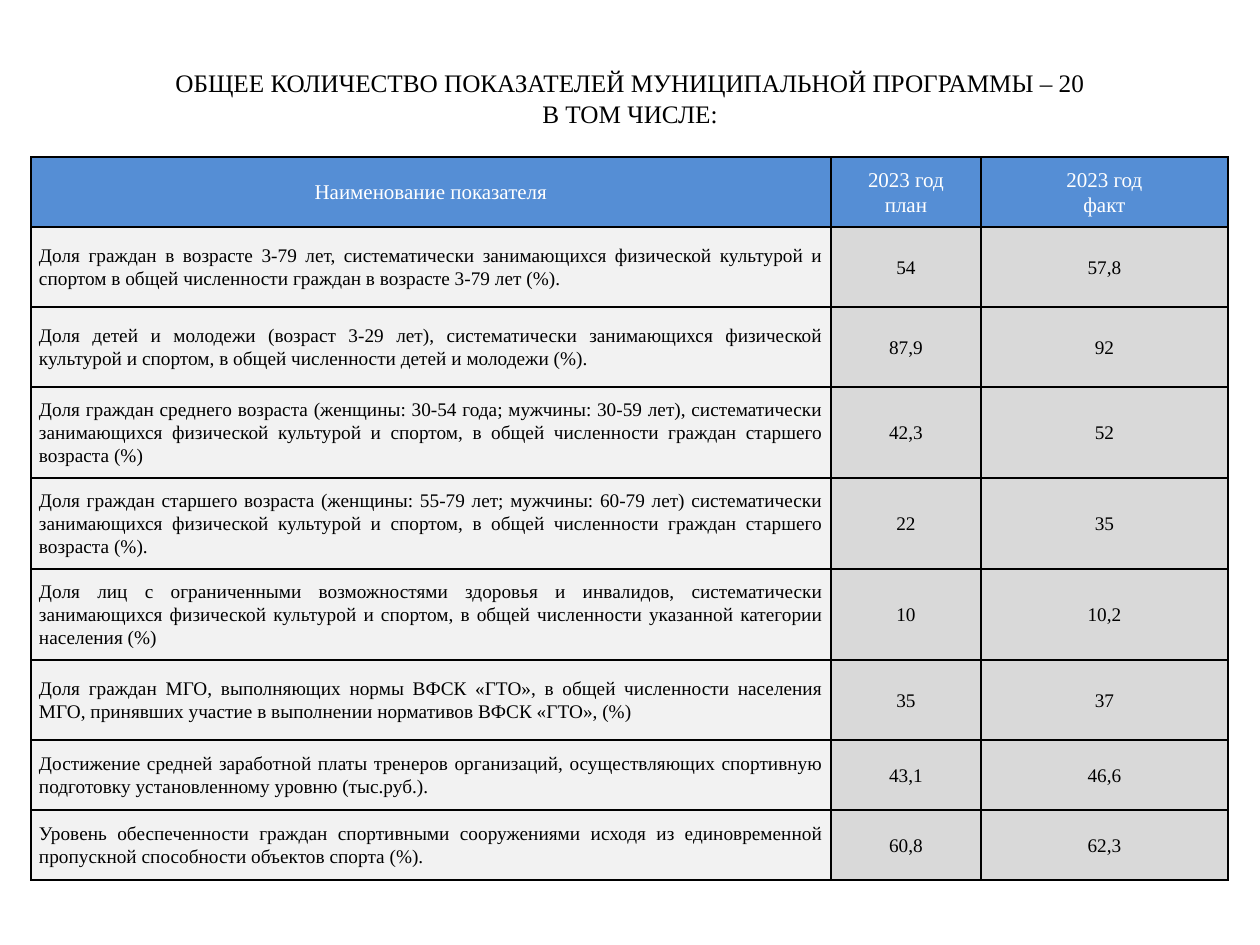
from dataclasses import dataclass

from lxml.etree import SubElement
from pptx import Presentation
from pptx.dml.color import RGBColor
from pptx.enum.text import MSO_ANCHOR, MSO_AUTO_SIZE, PP_ALIGN
from pptx.oxml.ns import qn
from pptx.util import Pt

EMU_PER_PX = 914400 // 126


@dataclass(frozen=True)
class Theme:
    """Hold the colours, font and type sizes of the slide."""

    font: str = "Times New Roman"
    ink: str = "000000"
    header_ink: str = "FFFFFF"
    header_fill: str = "558ED5"
    name_fill: str = "F2F2F2"
    value_fill: str = "D9D9D9"
    title_size: float = 14.4
    header_size: float = 12
    body_size: float = 11
    border_width: float = 1
    line_spacing: float = 1.07


THEME = Theme()
TITLE = "ОБЩЕЕ КОЛИЧЕСТВО ПОКАЗАТЕЛЕЙ МУНИЦИПАЛЬНОЙ ПРОГРАММЫ – 20\nВ ТОМ ЧИСЛЕ:"
HEADERS = ("Наименование показателя", "2023 год\nплан", "2023 год\nфакт")
INDICATORS = (
    ("Доля граждан в возрасте 3-79 лет, систематически занимающихся физической культурой и "
     "спортом в общей численности граждан в возрасте 3-79 лет (%).", "54", "57,8"),
    ("Доля детей и молодежи (возраст 3-29 лет), систематически занимающихся физической "
     "культурой и спортом, в общей численности детей и молодежи (%).", "87,9", "92"),
    ("Доля граждан среднего возраста (женщины: 30-54 года; мужчины: 30-59 лет), систематически "
     "занимающихся физической культурой и спортом, в общей численности граждан старшего "
     "возраста (%)", "42,3", "52"),
    ("Доля граждан старшего возраста (женщины: 55-79 лет; мужчины: 60-79 лет) систематически "
     "занимающихся физической культурой и спортом, в общей численности граждан старшего "
     "возраста (%).", "22", "35"),
    ("Доля лиц с ограниченными возможностями здоровья и инвалидов, систематически "
     "занимающихся физической культурой и спортом, в общей численности указанной категории "
     "населения (%)", "10", "10,2"),
    ("Доля граждан МГО, выполняющих нормы ВФСК «ГТО», в общей численности населения "
     "МГО, принявших участие в выполнении нормативов ВФСК «ГТО», (%)", "35", "37"),
    ("Достижение средней заработной платы тренеров организаций, осуществляющих спортивную "
     "подготовку установленному уровню (тыс.руб.).", "43,1", "46,6"),
    ("Уровень обеспеченности граждан спортивными сооружениями исходя из единовременной "
     "пропускной способности объектов спорта (%).", "60,8", "62,3"),
)
COLUMN_WIDTHS = (800, 150, 247)
ROW_HEIGHTS = (70, 80, 80, 91, 91, 91, 80, 70, 70)


def px(length):
    """Turn a length in px into EMU."""
    return length * EMU_PER_PX


def write_text(frame, text, *, size, color=THEME.ink, align=PP_ALIGN.CENTER, spacing=None):
    """Write each line of the text as a formatted paragraph."""
    frame.word_wrap = True
    for index, line in enumerate(text.split("\n")):
        paragraph = frame.add_paragraph() if index else frame.paragraphs[0]
        paragraph.alignment = align
        paragraph.line_spacing = spacing
        run = paragraph.add_run()
        run.text = line
        run.font.name = THEME.font
        run.font.size = Pt(size)
        run.font.bold = False
        run.font.color.rgb = RGBColor.from_string(color)


def add_title(slide):
    """Place and fill the title placeholder."""
    title = slide.shapes.title
    title.left, title.top, title.width, title.height = map(px, (63, 38, 1134, 110))
    frame = title.text_frame
    frame.auto_size = MSO_AUTO_SIZE.NONE
    frame.vertical_anchor = MSO_ANCHOR.MIDDLE
    frame.margin_top, frame.margin_bottom = px(10), 0
    write_text(frame, TITLE, size=THEME.title_size)


def add_borders(cell):
    """Draw a thin line on every side of the cell."""
    properties = cell._tc.get_or_add_tcPr()
    for side in ("lnL", "lnR", "lnT", "lnB"):
        border = SubElement(properties, qn(f"a:{side}"), w=str(Pt(THEME.border_width)))
        SubElement(SubElement(border, qn("a:solidFill")), qn("a:srgbClr"), val=THEME.ink)


def fill_cell(cell, text, fill, **text_format):
    """Give the cell its borders, fill and text."""
    add_borders(cell)
    cell.fill.solid()
    cell.fill.fore_color.rgb = RGBColor.from_string(fill)
    cell.vertical_anchor = MSO_ANCHOR.MIDDLE
    cell.margin_left = cell.margin_right = px(8)
    cell.margin_top = cell.margin_bottom = 0
    write_text(cell.text_frame, text, spacing=THEME.line_spacing, **text_format)


def add_indicator_table(slide):
    """Add the table of planned and actual indicator values."""
    table = slide.shapes.add_table(
        len(ROW_HEIGHTS), len(COLUMN_WIDTHS), px(31), px(157),
        px(sum(COLUMN_WIDTHS)), px(sum(ROW_HEIGHTS))).table
    table.first_row = table.horz_banding = False
    for column, width in zip(table.columns, COLUMN_WIDTHS):
        column.width = px(width)
    for row, height in zip(table.rows, ROW_HEIGHTS):
        row.height = px(height)
    for column, header in enumerate(HEADERS):
        fill_cell(table.cell(0, column), header, THEME.header_fill,
                  size=THEME.header_size, color=THEME.header_ink)
    for row, (name, *values) in enumerate(INDICATORS, start=1):
        fill_cell(table.cell(row, 0), name, THEME.name_fill,
                  size=THEME.body_size, align=PP_ALIGN.JUSTIFY)
        for column, value in enumerate(values, start=1):
            fill_cell(table.cell(row, column), value, THEME.value_fill, size=THEME.body_size)


def main():
    """Build and save the slide."""
    deck = Presentation()
    deck.slide_width, deck.slide_height = px(1260), px(945)
    slide = deck.slides.add_slide(deck.slide_layouts[5])
    add_title(slide)
    add_indicator_table(slide)
    deck.save("out.pptx")


if __name__ == "__main__":
    main()
